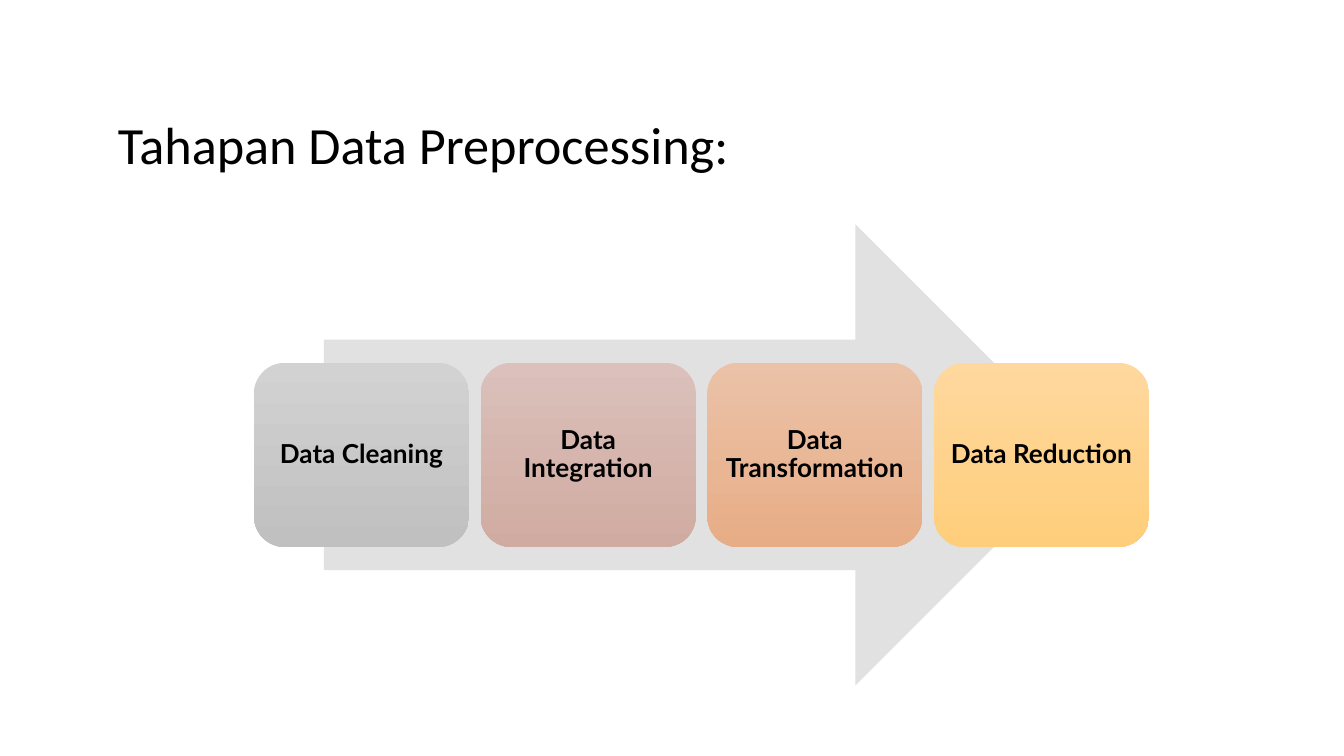
"""Build a slide showing the four data preprocessing stages along an arrow."""
from pptx import Presentation
from pptx.dml.color import RGBColor
from pptx.enum.shapes import MSO_SHAPE as Shape
from pptx.enum.text import MSO_ANCHOR as Anchor, PP_ALIGN as Align
from pptx.util import Inches, Pt


def color(value):
    return RGBColor.from_string(value)


def write(box, text, inset, frame_format, para_format, font_format):
    frame = box.text_frame
    margins = {f"margin_{side}": Inches(inset) for side in ("left", "top", "right", "bottom")}
    para = frame.paragraphs[0]
    span = para.add_run()
    span.text = text
    span.font.color.rgb = color("000000")
    for target, values in (
        (frame, {"word_wrap": True, **margins, **frame_format}),
        (para, {"line_spacing": 0.9, **para_format}),
        (span.font, font_format),
    ):
        for name, value in values.items():
            setattr(target, name, value)


deck = Presentation()
deck.slide_width, deck.slide_height = Inches(10), Inches(10 * 9 / 16)
page = deck.slides.add_slide(deck.slide_layouts[6])

title = page.shapes.add_textbox(Inches(0.78), Inches(0.79), Inches(8.43), Inches(0.77))
write(title, "Tahapan Data Preprocessing:", 0.1, {"vertical_anchor": Anchor.TOP},
      {"alignment": Align.LEFT}, {"name": "Calibri", "size": Pt(28)})

arrow = page.shapes.add_shape(
    Shape.RIGHT_ARROW, Inches(2.41), Inches(1.67), Inches(5.67), Inches(3.43))
arrow.shadow.inherit = False
arrow.fill.solid()
arrow.fill.fore_color.rgb = color("E1E1E1")
arrow.line.fill.background()

stages = [
    ("Data Cleaning", "D2D2D2", "C0C0C0"),
    ("Data Integration", "DBC0BB", "D0ABA1"),
    ("Data Transformation", "EBC2A8", "E7AD86"),
    ("Data Reduction", "FFD89E", "FFCE7C"),
]
first_left, last_left = 1.89, 6.95
pitch = (last_left - first_left) / (len(stages) - 1)

for index, (label, *shades) in enumerate(stages):
    stage = page.shapes.add_shape(
        Shape.ROUNDED_RECTANGLE, Inches(first_left + index * pitch), Inches(2.7),
        Inches(1.6), Inches(1.37))
    stage.shadow.inherit = False
    stage.line.fill.background()
    stage.fill.gradient()
    stage.fill.gradient_angle = 270
    for stop, shade, position in zip(stage.fill.gradient_stops, shades, (0, 1)):
        stop.color.rgb = color(shade)
        stop.position = position
    write(stage, label, 0.05, {"vertical_anchor": Anchor.MIDDLE},
          {"alignment": Align.CENTER}, {"name": "Lato", "size": Pt(14), "bold": True})

deck.save("out.pptx")
